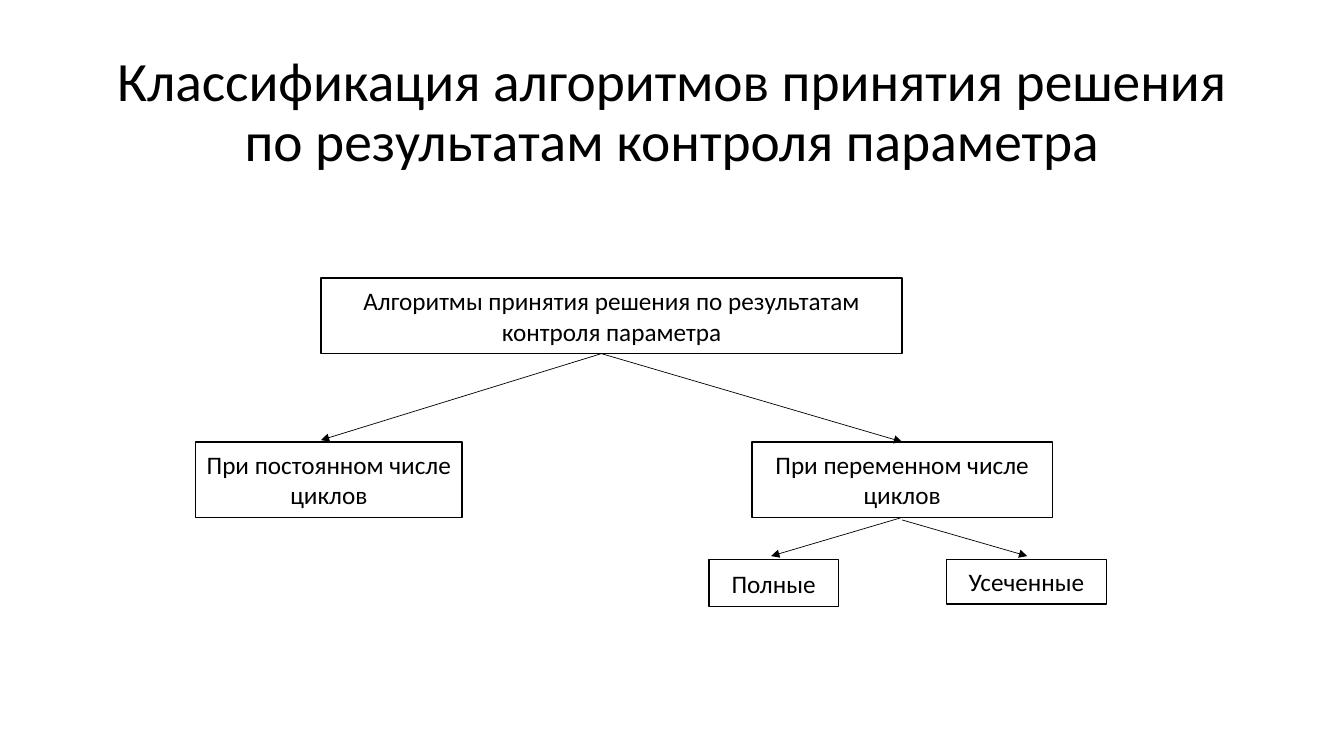
from dataclasses import dataclass
from typing import Optional

from lxml import etree
from pptx import Presentation
from pptx import util as u
from pptx.dml.color import RGBColor
from pptx.enum import shapes, text
from pptx.oxml.ns import qn

COLUMNS, ROWS = 16, 9
SLIDE_WIDTH, SLIDE_HEIGHT = u.Inches(13.333), u.Inches(7.5)
BLACK, WHITE = "000000", "FFFFFF"
TOP, BOTTOM = 0, 2


@dataclass(frozen=True)
class Node:
    name: str
    label: str
    column: float
    row: float
    columns: float
    rows: float


@dataclass(frozen=True)
class Arrow:
    start: tuple[float, float]
    end: tuple[float, float]
    parent: Optional[str] = None
    child: Optional[str] = None


TITLE = Node(
    "title",
    "Классификация алгоритмов принятия решения по результатам контроля параметра",
    1.1, 0.48, 13.8, 1.74,
)
NODES = [
    Node("root", "Алгоритмы принятия решения по результатам контроля параметра",
         3.82, 3.31, 6.92, 0.9),
    Node("constant", "При постоянном числе циклов", 2.33, 5.26, 3.17, 0.9),
    Node("variable", "При переменном числе циклов", 8.95, 5.26, 3.58, 0.9),
    Node("truncated", "Усеченные", 11.27, 6.66, 1.9, 0.53),
    Node("full", "Полные", 8.44, 6.66, 1.54, 0.56),
]
ARROWS = [
    Arrow((7.16, 4.21), (3.82, 5.24)),
    Arrow((7.16, 4.21), (10.74, 5.26), child="variable"),
    Arrow((10.74, 6.16), (9.18, 6.62), parent="variable"),
    Arrow((10.74, 6.19), (12.23, 6.62)),
]


def across(columns: float) -> int:
    return round(SLIDE_WIDTH * columns / COLUMNS)


def down(rows: float) -> int:
    return round(SLIDE_HEIGHT * rows / ROWS)


def frame(node: Node) -> tuple[int, int, int, int]:
    return across(node.column), down(node.row), across(node.columns), down(node.rows)


def paint(target, colour: str) -> None:
    if hasattr(target, "solid"):
        target.solid()
        target.fore_color.rgb = RGBColor.from_string(colour)
    else:
        target.rgb = RGBColor.from_string(colour)


def write(box, content: str, *, size: float = 18, colour: str = BLACK,
          font: str = "Calibri", spacing: float = 1.0) -> None:
    box.text_frame.word_wrap = True
    box.text_frame.vertical_anchor = text.MSO_ANCHOR.MIDDLE
    para = box.text_frame.paragraphs[0]
    para.alignment = text.PP_ALIGN.CENTER
    para.line_spacing = spacing
    span = para.add_run()
    span.text = content
    span.font.size = u.Pt(size)
    span.font.name = font
    paint(span.font.color, colour)


def draw_node(page, node: Node):
    box = page.shapes.add_shape(shapes.MSO_SHAPE.RECTANGLE, *frame(node))
    box.shadow.inherit = False
    paint(box.fill, WHITE)
    paint(box.line.fill, BLACK)
    box.line.width = u.Pt(1)
    write(box, node.label)
    return box


def draw_arrow(page, arrow: Arrow, boxes: dict) -> None:
    line = page.shapes.add_connector(
        shapes.MSO_CONNECTOR.STRAIGHT,
        across(arrow.start[0]), down(arrow.start[1]),
        across(arrow.end[0]), down(arrow.end[1]),
    )
    if arrow.parent:
        line.begin_connect(boxes[arrow.parent], BOTTOM)
    if arrow.child:
        line.end_connect(boxes[arrow.child], TOP)
    paint(line.line.fill, BLACK)
    line.line.width = u.Pt(0.5)
    properties = line.element.spPr
    etree.SubElement(properties.find(qn("a:ln")), qn("a:tailEnd"), type="triangle")
    etree.SubElement(properties, qn("a:effectLst"))


def main() -> None:
    deck = Presentation()
    deck.slide_width, deck.slide_height = SLIDE_WIDTH, SLIDE_HEIGHT
    page = deck.slides.add_slide(deck.slide_layouts[6])
    paint(page.background.fill, WHITE)
    write(page.shapes.add_textbox(*frame(TITLE)), TITLE.label, size=39.6, spacing=0.9)
    boxes = {node.name: draw_node(page, node) for node in NODES}
    for arrow in ARROWS:
        draw_arrow(page, arrow, boxes)
    deck.save("out.pptx")


if __name__ == "__main__":
    main()
